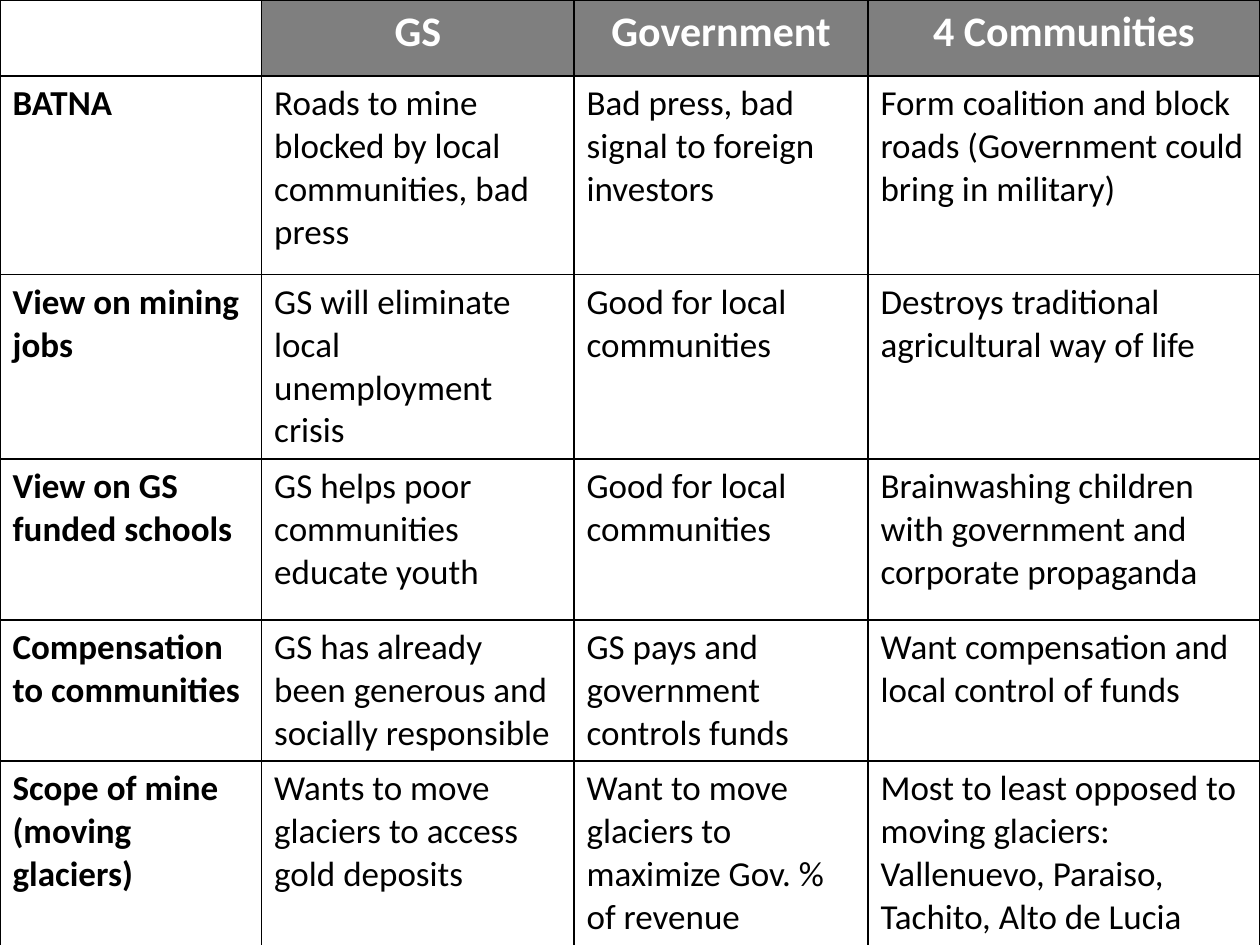
from lxml.etree import SubElement
from pptx import Presentation
from pptx.dml.color import RGBColor
from pptx.enum.text import PP_ALIGN
from pptx.oxml.ns import qn
from pptx.util import Pt

BLACK = RGBColor(0x00, 0x00, 0x00)
WHITE = RGBColor(0xFF, 0xFF, 0xFF)
FONT = "Calibri"

COL_WIDTHS = [149.5, 178.5, 168, 224]
ROW_HEIGHTS = [43.5, 113.5, 103, 92, 79, 114]

ROWS = [
    ["", "GS", "Government", "4 Communities"],
    ["BATNA",
     "Roads to mine blocked by local communities, bad press",
     "Bad press, bad signal to foreign investors",
     "Form coalition and block roads (Government could bring in military)"],
    ["View on mining jobs",
     "GS will eliminate local unemployment crisis",
     "Good for local communities",
     "Destroys traditional agricultural way of life"],
    ["View on GS funded schools",
     "GS helps poor communities educate youth",
     "Good for local communities",
     "Brainwashing children with government and corporate propaganda"],
    ["Compensation to communities",
     "GS has already been generous and socially responsible",
     "GS pays and government controls funds",
     "Want compensation and local control of funds"],
    ["Scope of mine (moving glaciers)",
     "Wants to move glaciers to access gold deposits",
     "Want to move glaciers to maximize Gov. % of revenue",
     "Most to least opposed to moving glaciers: Vallenuevo, Paraiso, "
     "Tachito, Alto de Lucia"],
]


def set_borders(cell, color, width):
    tcPr = cell._tc.get_or_add_tcPr()
    for side in ("a:lnL", "a:lnR", "a:lnT", "a:lnB"):
        ln = SubElement(tcPr, qn(side), w=str(Pt(width)))
        fill = SubElement(ln, qn("a:solidFill"))
        SubElement(fill, qn("a:srgbClr"), val=str(color))


def fill_cell(cell, color, opacity):
    cell.fill.solid()
    cell.fill.fore_color.rgb = color
    clr = cell._tc.tcPr.find(qn("a:solidFill")).find(qn("a:srgbClr"))
    SubElement(clr, qn("a:alpha"), val=str(opacity * 1000))


def write_cell(cell, text, size, color, bold, align):
    cell.text_frame.text = text
    p = cell.text_frame.paragraphs[0]
    p.alignment = align
    for r in p.runs:
        r.font.name = FONT
        r.font.size = Pt(size)
        r.font.bold = bold
        r.font.color.rgb = color


def add_comparison_table(s):
    frame = s.shapes.add_table(len(ROWS), len(COL_WIDTHS), Pt(0), Pt(0),
                               Pt(sum(COL_WIDTHS)), Pt(sum(ROW_HEIGHTS)))
    table = frame.table
    table.first_row = table.horz_banding = False
    for column, width in zip(table.columns, COL_WIDTHS):
        column.width = Pt(width)
    for row, height in zip(table.rows, ROW_HEIGHTS):
        row.height = Pt(height)

    for i, texts in enumerate(ROWS):
        for j, text in enumerate(texts):
            cell = table.cell(i, j)
            set_borders(cell, BLACK, 1)
            # Party names on half-transparent black, the rest unfilled
            if i == 0 and text:
                fill_cell(cell, BLACK, 50)
                write_cell(cell, text, 24, WHITE, True, PP_ALIGN.CENTER)
            else:
                cell.fill.background()
                write_cell(cell, text, 20, BLACK, j == 0, PP_ALIGN.LEFT)


def main():
    prs = Presentation()
    prs.slide_width, prs.slide_height = Pt(720), Pt(540)
    # Blank layout: the table takes the whole slide
    s = prs.slides.add_slide(prs.slide_layouts[6])
    add_comparison_table(s)
    prs.save("out.pptx")


if __name__ == "__main__":
    main()
